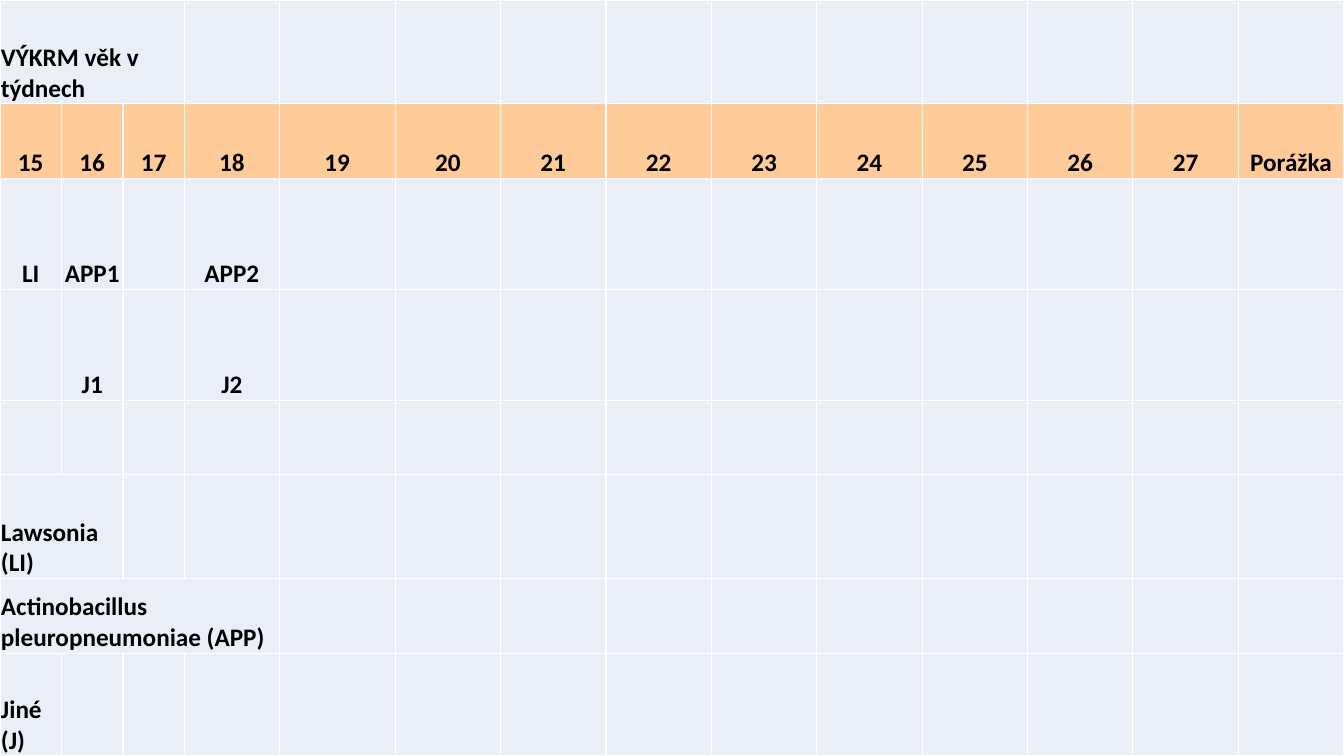
from dataclasses import dataclass

from lxml.etree import SubElement as Sub
from pptx import Presentation
from pptx.dml.color import RGBColor as RGB
from pptx.enum.text import MSO_ANCHOR as Anchor, PP_ALIGN as Align
from pptx.oxml.ns import qn
from pptx.util import Inches, Pt


@dataclass(frozen=True)
class Theme:
    pale: str = "EAEFF7"
    week: str = "FFCC99"
    line: str = "FFFFFF"
    ink: str = "000000"
    font: str = "Calibri"
    size: int = 18
    rule: int = 1


theme = Theme()
WIDE, HIGH = 13.33, 7.5
WEEK_ROW = 1
lead = [0.61, 0.61, 0.61, 0.94, 1.15]
rest = 9
cols = lead + [(WIDE - sum(lead)) / rest] * rest
rows = [1.03, 0.74, 1.1, 1.1, 0.74, 1.03, 0.74, 1.02]

# Row labels: row -> (text, columns spanned)
labels = {
    0: ("VÝKRM věk v týdnech", 3),
    5: ("Lawsonia (LI)", 2),
    6: ("Actinobacillus pleuropneumoniae (APP)", 4),
    7: ("Jiné (J)", 1),
}
# Centred entries: (row, column) -> text
marks = {(2, 0): "LI", (2, 1): "APP1", (2, 3): "APP2", (3, 1): "J1", (3, 3): "J2"}
weeks = [*range(15, 28), "Porážka"]
marks.update({(WEEK_ROW, c): str(week) for c, week in enumerate(weeks)})

cell_look = {
    "vertical_anchor": Anchor.BOTTOM,
    "margin_left": Inches(0.01),
    "margin_right": Inches(0.01),
    "margin_top": Inches(0.01),
    "margin_bottom": 0,
}
font_look = {"name": theme.font, "size": Pt(theme.size), "bold": True}


def border(cell):
    props = cell._tc.get_or_add_tcPr()
    for side in ("lnL", "lnR", "lnT", "lnB"):
        line = Sub(props, qn("a:" + side), w=str(Pt(theme.rule)))
        Sub(Sub(line, qn("a:solidFill")), qn("a:srgbClr"), val=theme.line)


def write(cell, text, align):
    para = cell.text_frame.paragraphs[0]
    para.alignment = align
    run = para.add_run()
    run.text = text
    for key, value in font_look.items():
        setattr(run.font, key, value)
    run.font.color.rgb = RGB.from_string(theme.ink)


deck = Presentation()
deck.slide_width, deck.slide_height = Inches(WIDE), Inches(HIGH)
slide = deck.slides.add_slide(deck.slide_layouts[6])
table = slide.shapes.add_table(
    len(rows), len(cols), 0, 0, Inches(WIDE), Inches(HIGH)
).table
table.first_row = table.horz_banding = False

for col, width in zip(table.columns, cols):
    col.width = Inches(width)
for row, height in zip(table.rows, rows):
    row.height = Inches(height)

for r in range(len(rows)):
    for c in range(len(cols)):
        cell = table.cell(r, c)
        for key, value in cell_look.items():
            setattr(cell, key, value)
        border(cell)
        cell.fill.solid()
        tint = theme.week if r == WEEK_ROW else theme.pale
        cell.fill.fore_color.rgb = RGB.from_string(tint)

for (r, c), text in marks.items():
    write(table.cell(r, c), text, Align.CENTER)

for r, (text, span) in labels.items():
    cell = table.cell(r, 0)
    if span > 1:
        cell.merge(table.cell(r, span - 1))
    write(cell, text, Align.LEFT)

deck.save("out.pptx")
